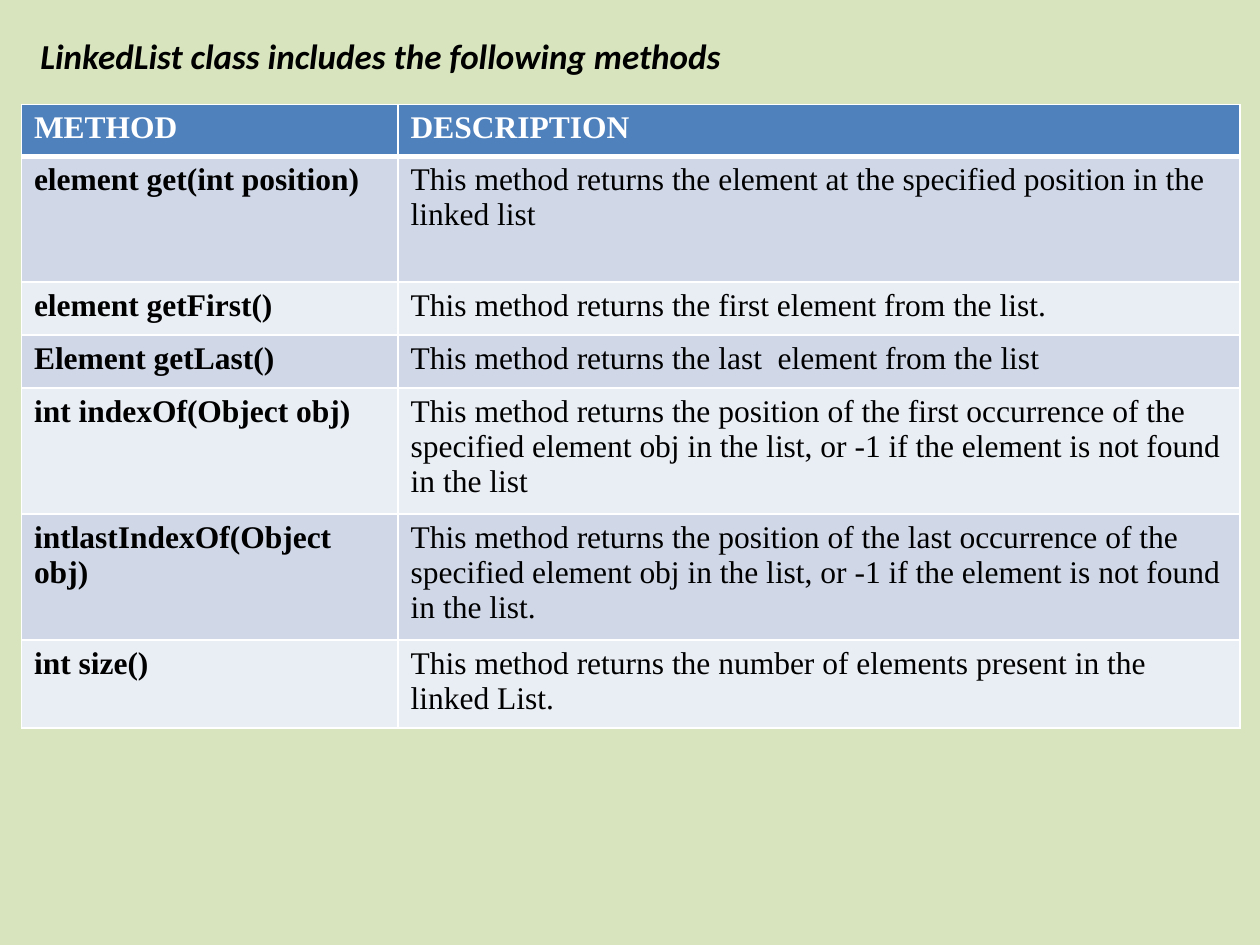
"""Build a slide with a table of the LinkedList class methods."""
from dataclasses import dataclass

from lxml.etree import SubElement
from pptx import Presentation
from pptx.dml.color import RGBColor as Color
from pptx.enum.text import MSO_ANCHOR as Anchor, MSO_AUTO_SIZE as AutoSize, PP_ALIGN as Align
from pptx.oxml.ns import qn
from pptx.util import Inches, Pt


@dataclass(frozen=True)
class Theme:
    background: str = "D7E4BD"
    header: str = "4F81BD"
    bands: tuple = ("E9EDF4", "D0D8E8")
    text: str = "000000"
    light: str = "FFFFFF"
    title_font: str = "Calibri"
    table_font: str = "Times New Roman"
    title_size: int = 20
    table_size: int = 18


theme = Theme()


def set_font(font, name, size, color, bold, italic=False):
    font.name = name
    font.size = Pt(size)
    font.color.rgb = Color.from_string(color)
    font.bold = bold
    font.italic = italic


def add_border(cell, side, width):
    line = SubElement(cell._tc.get_or_add_tcPr(), qn(f"a:ln{side}"), w=str(Pt(width)))
    fill = SubElement(line, qn("a:solidFill"))
    SubElement(fill, qn("a:srgbClr"), val=theme.light)


deck = Presentation()
deck.slide_width, deck.slide_height = Inches(10), Inches(7.5)
page = deck.slides.add_slide(deck.slide_layouts[5])
page.background.fill.solid()
page.background.fill.fore_color.rgb = Color.from_string(theme.background)

title = page.shapes.title
title.left, title.top = Inches(0.17), Inches(0.06)
title.width, title.height = Inches(9.58), Inches(1.62)
frame = title.text_frame
frame.text = "LinkedList class includes the following methods"
frame.word_wrap = True
frame.auto_size = AutoSize.NONE
frame.vertical_anchor = Anchor.TOP
frame.margin_left = Inches(0.15)
para = frame.paragraphs[0]
para.alignment = Align.LEFT
para.line_spacing = 1.5
set_font(para.font, theme.title_font, theme.title_size, theme.text, True, True)

rows = [
    (0.41, "METHOD", "DESCRIPTION"),
    (1.0, "element get(int position)",
     "This method returns the element at the specified position in the linked list"),
    (0.42, "element getFirst()", "This method returns the first element from the list."),
    (0.42, "Element getLast()", "This method returns the last  element from the list"),
    (1.0, "int indexOf(Object obj)",
     "This method returns the position of the first occurrence of the specified element obj "
     "in the list, or -1 if the element is not found in the list"),
    (1.0, "intlastIndexOf(Object obj)",
     "This method returns the position of the last occurrence of the specified element obj "
     "in the list, or -1 if the element is not found in the list."),
    (0.7, "int size()",
     "This method returns the number of elements present in the linked List."),
]
column_widths = (2.99, 6.68)
table = page.shapes.add_table(
    len(rows), len(column_widths), Inches(0.17), Inches(0.83),
    Inches(sum(column_widths)), Inches(sum(row[0] for row in rows))).table
for column, width in zip(table.columns, column_widths):
    column.width = Inches(width)

for row_index, (height, *texts) in enumerate(rows):
    table.rows[row_index].height = Inches(height)
    is_header = row_index == 0
    for column_index, text in enumerate(texts):
        cell = table.cell(row_index, column_index)
        cell.text = text
        for side in "LRTB":
            heavy = (side == "B" and is_header) or (side == "T" and row_index == 1)
            add_border(cell, side, 3 if heavy else 1)
        cell.fill.solid()
        cell.fill.fore_color.rgb = Color.from_string(
            theme.header if is_header else theme.bands[row_index % 2])
        set_font(cell.text_frame.paragraphs[0].font, theme.table_font, theme.table_size,
                 theme.light if is_header else theme.text, is_header or column_index == 0)

deck.save("out.pptx")
